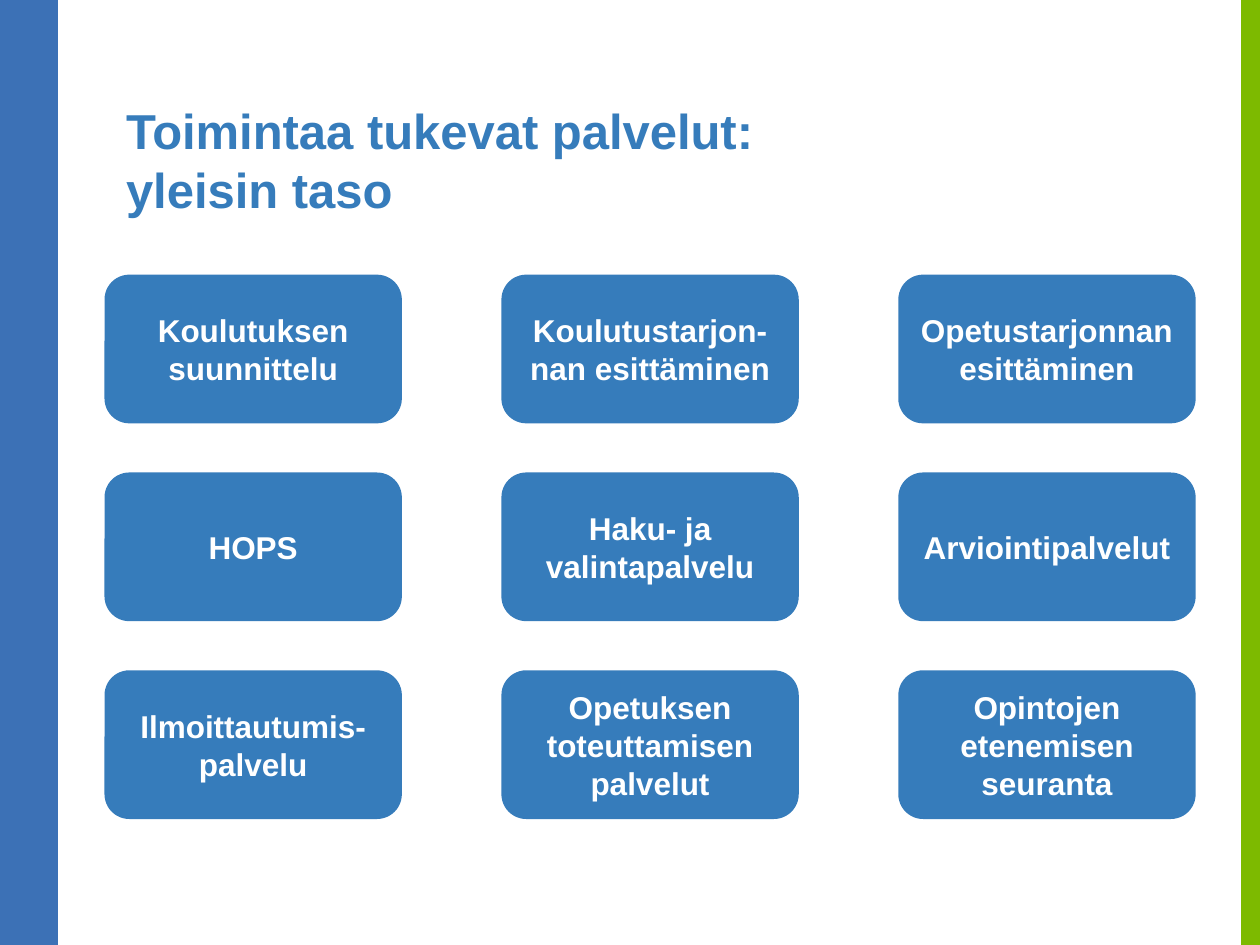
from pptx import Presentation
from pptx.dml.color import RGBColor
from pptx.enum.shapes import MSO_SHAPE
from pptx.enum.text import MSO_ANCHOR, PP_ALIGN
from pptx.util import Inches, Pt


def rgb(value):
    return RGBColor.from_string(value)


class SlideBuilder:
    font = "Arial"
    blue = "367CBB"
    white = "FFFFFF"

    def __init__(self, prs):
        self.slide = prs.slides.add_slide(prs.slide_layouts[5])

    def set_text(self, sp, text, size, color, align):
        tf = sp.text_frame
        tf.word_wrap = True
        tf.vertical_anchor = MSO_ANCHOR.MIDDLE
        p = tf.paragraphs[0]
        p.text = text
        p.alignment = align
        p.font.name = self.font
        p.font.size = Pt(size)
        p.font.bold = True
        p.font.color.rgb = rgb(color)

    def title(self, text, x, y, w, h):
        sp = self.slide.shapes.title
        sp.left, sp.top, sp.width, sp.height = map(Inches, (x, y, w, h))
        self.set_text(sp, text, 28, self.blue, PP_ALIGN.LEFT)

    def block(self, kind, x, y, w, h, color):
        sp = self.slide.shapes.add_shape(kind, *map(Inches, (x, y, w, h)))
        sp.shadow.inherit = False
        sp.fill.solid()
        sp.fill.fore_color.rgb = rgb(color)
        sp.line.fill.background()
        return sp

    def bar(self, x, w, color):
        self.block(MSO_SHAPE.RECTANGLE, x, 0, w, 7.5, color)

    def service(self, text, x, y, w, h):
        sp = self.block(MSO_SHAPE.ROUNDED_RECTANGLE, x, y, w, h, self.blue)
        self.set_text(sp, text, 18, self.white, PP_ALIGN.CENTER)


SERVICES = [
    ["Koulutuksen suunnittelu", "Koulutustarjon-nan esittäminen", "Opetustarjonnan esittäminen"],
    ["HOPS", "Haku- ja valintapalvelu", "Arviointipalvelut"],
    ["Ilmoittautumis-palvelu", "Opetuksen toteuttamisen palvelut", "Opintojen etenemisen seuranta"],
]


def main():
    prs = Presentation()
    prs.slide_width = Inches(10)
    prs.slide_height = Inches(7.5)

    s = SlideBuilder(prs)
    s.bar(0, 0.46, "3C71B6")
    s.bar(9.85, 0.15, "7DBA00")
    s.title("Toimintaa tukevat palvelut:\vyleisin taso", 0.9, 0.91, 6.91, 0.71)
    for row, names in enumerate(SERVICES):
        for col, name in enumerate(names):
            s.service(name, 0.83 + 3.15 * col, 2.18 + 1.57 * row, 2.36, 1.18)

    prs.save("out.pptx")


if __name__ == "__main__":
    main()
